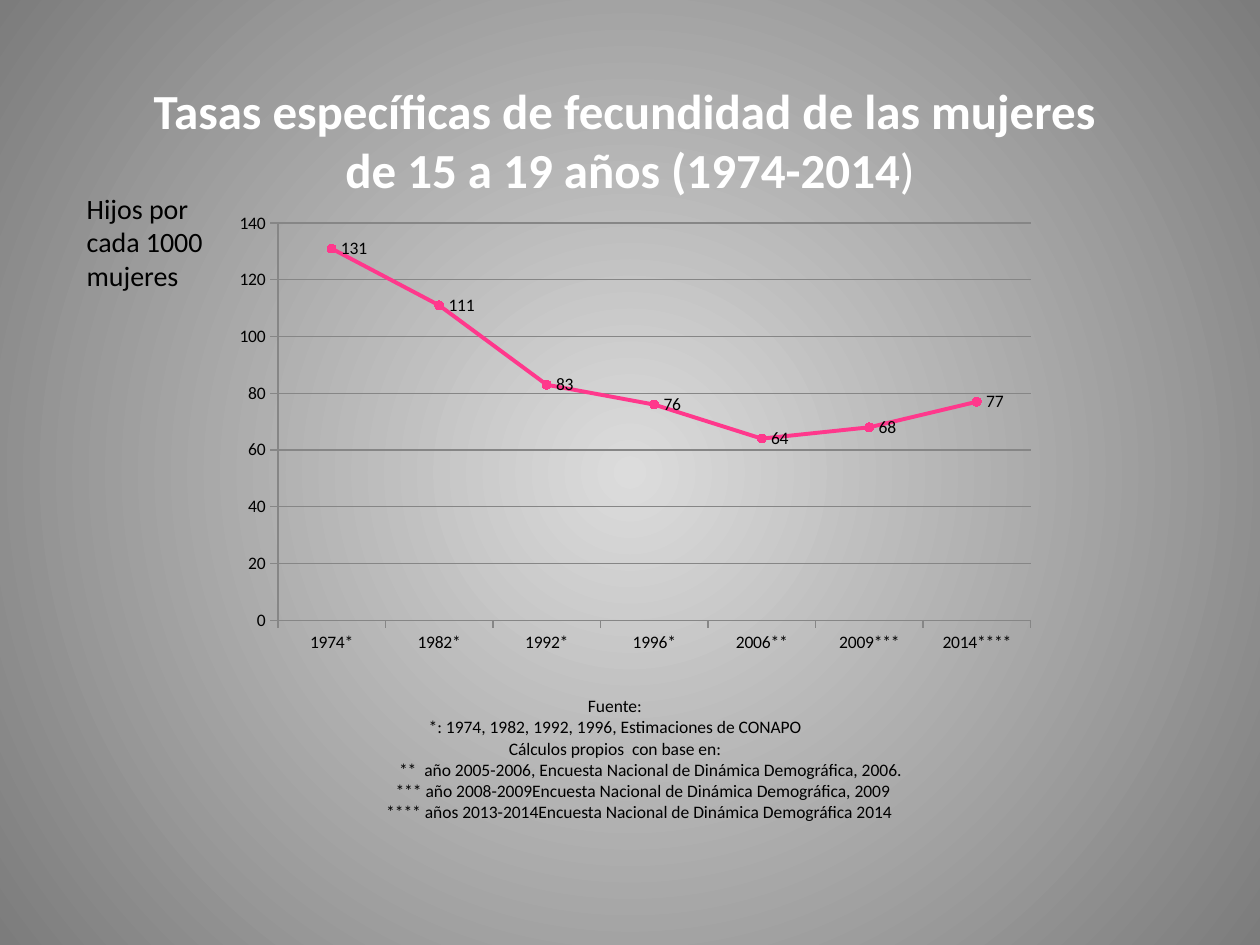
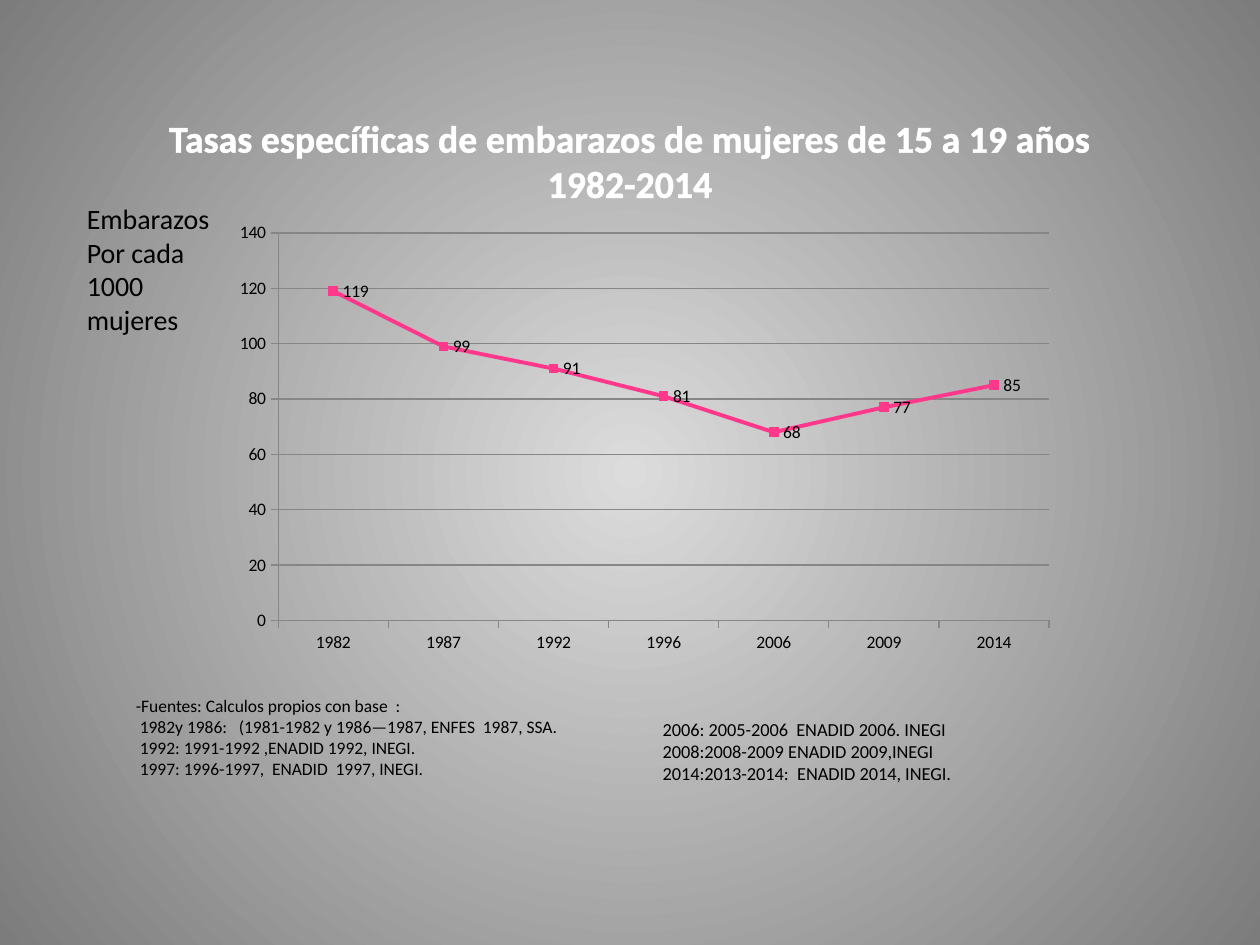
from dataclasses import dataclass

import lxml.etree
import pptx
import pptx.chart.chart
import pptx.chart.data
import pptx.dml.color
import pptx.enum.chart
import pptx.enum.text
import pptx.oxml.ns
import pptx.presentation
import pptx.slide
import pptx.text.text
import pptx.util

EMU_PER_PX = 9144
FONT = "Calibri"
BLACK, WHITE, PINK, GREY = "000000", "FFFFFF", "FF388C", "868686"
CENTRE_LIGHT, EDGE_DARK = "DCDCDC", "7C7C7C"
LEFT, CENTER = pptx.enum.text.PP_ALIGN.LEFT, pptx.enum.text.PP_ALIGN.CENTER
CIRCLE = pptx.enum.chart.XL_MARKER_STYLE.CIRCLE
SQUARE = pptx.enum.chart.XL_MARKER_STYLE.SQUARE


@dataclass(frozen=True)
class Box:
    left: int
    top: int
    width: int
    height: int


@dataclass(frozen=True)
class TextRun:
    text: str
    bold: bool = True


@dataclass(frozen=True)
class Title:
    box: Box
    lines: tuple[tuple[TextRun, ...], ...]
    size: float
    outline: float = 0


@dataclass(frozen=True)
class Line:
    text: str
    indent: int = 0


@dataclass(frozen=True)
class Note:
    box: Box
    lines: tuple[Line, ...]
    size: float = 10
    align: pptx.enum.text.PP_ALIGN = LEFT
    top_inset: int = 5


@dataclass(frozen=True)
class RateChart:
    box: Box
    rates: dict[str, int]
    marker: pptx.enum.chart.XL_MARKER_STYLE


@dataclass(frozen=True)
class RateSlide:
    title: Title
    chart: RateChart
    notes: tuple[Note, ...]


SLIDES = (
    RateSlide(
        Title(
            Box(50, 13, 900, 149),
            (
                (TextRun("Tasas específicas de fecundidad de las mujeres "),),
                (TextRun("de 15 a 19 años (1974-2014"), TextRun(")", bold=False)),
            ),
            size=28,
        ),
        RateChart(
            Box(177, 162, 654, 363),
            {"1974*": 131, "1982*": 111, "1992*": 83, "1996*": 76,
             "2006**": 64, "2009***": 68, "2014****": 77},
            CIRCLE,
        ),
        (
            Note(
                Box(242, 547, 492, 111),
                (
                    Line("Fuente:"),
                    Line("*: 1974, 1982, 1992, 1996, Estimaciones de CONAPO"),
                    Line("Cálculos propios  con base en:"),
                    Line("**  año 2005-2006, Encuesta Nacional de Dinámica Demográfica, 2006.", 56),
                    Line("*** año 2008-2009Encuesta Nacional de Dinámica Demográfica, 2009", 44),
                    Line("**** años 2013-2014Encuesta Nacional de Dinámica Demográfica 2014", 38),
                ),
                align=CENTER,
            ),
            Note(Box(59, 147, 136, 91), (Line("Hijos por cada 1000"), Line("mujeres")), size=16),
        ),
    ),
    RateSlide(
        Title(
            Box(50, 30, 900, 138),
            (
                (TextRun("Tasas específicas de embarazos de mujeres de 15 a 19 años"),),
                (TextRun("1982-2014"),),
            ),
            size=21.6,
            outline=1.45,
        ),
        RateChart(
            Box(177, 170, 669, 355),
            {"1982": 119, "1987": 99, "1992": 91, "1996": 81,
             "2006": 68, "2009": 77, "2014": 85},
            SQUARE,
        ),
        (
            Note(
                Box(98, 547, 409, 77),
                (
                    Line("-Fuentes: Calculos propios con base  :"),
                    Line(" 1982y 1986:   (1981-1982 y 1986—1987, ENFES  1987, SSA."),
                    Line(" 1992: 1991-1992 ,ENADID 1992, INEGI."),
                    Line(" 1997: 1996-1997,  ENADID  1997, INEGI."),
                ),
            ),
            Note(
                Box(516, 547, 362, 98),
                (
                    Line("2006: 2005-2006  ENADID 2006. INEGI"),
                    Line("2008:2008-2009 ENADID 2009,INEGI"),
                    Line("2014:2013-2014:  ENADID 2014, INEGI."),
                ),
                size=10.5,
                top_inset=23,
            ),
            Note(Box(59, 155, 119, 118), (Line("Embarazos"), Line("Por cada 1000 mujeres")), size=16),
        ),
    ),
)


def px(length: int) -> pptx.util.Emu:
    return pptx.util.Emu(length * EMU_PER_PX)


def place(box: Box) -> tuple[pptx.util.Emu, ...]:
    return px(box.left), px(box.top), px(box.width), px(box.height)


def colour(value: str) -> pptx.dml.color.RGBColor:
    return pptx.dml.color.RGBColor.from_string(value)


def add_xml(parent: lxml.etree._Element, tag: str, **attributes: str) -> lxml.etree._Element:
    return lxml.etree.SubElement(parent, pptx.oxml.ns.qn(tag), attributes)


def style_font(font: pptx.text.text.Font, size: float, value: str, bold: bool = False) -> None:
    font.name = FONT
    font.size = pptx.util.Pt(size)
    font.bold = bold
    font.color.rgb = colour(value)


def paint_background(presentation: pptx.presentation.Presentation) -> None:
    master = presentation.slide_master
    fill = master.background.fill
    fill.gradient()
    for stop, position, value in zip(fill.gradient_stops, (0, 1), (CENTRE_LIGHT, EDGE_DARK)):
        stop.position = position
        stop.color.rgb = colour(value)
    gradient = master.element.xpath("p:cSld/p:bg//a:gradFill")[0]
    for linear in gradient.xpath("a:lin"):
        gradient.remove(linear)
    radial = add_xml(gradient, "a:path", path="circle")
    add_xml(radial, "a:fillToRect", l="50000", t="50000", r="50000", b="50000")


def outline_run(run: pptx.text.text._Run, width: float) -> None:
    properties = run._r.get_or_add_rPr()
    line = add_xml(properties, "a:ln", w=str(pptx.util.Pt(width)))
    add_xml(add_xml(line, "a:solidFill"), "a:srgbClr", val=WHITE)
    properties.insert(0, line)


def add_text_frame(slide: pptx.slide.Slide, box: Box) -> pptx.text.text.TextFrame:
    frame = slide.shapes.add_textbox(*place(box)).text_frame
    frame.word_wrap = True
    return frame


def add_title(slide: pptx.slide.Slide, title: Title) -> None:
    frame = add_text_frame(slide, title.box)
    frame.vertical_anchor = pptx.enum.text.MSO_ANCHOR.BOTTOM
    paragraph = frame.paragraphs[0]
    paragraph.alignment = CENTER
    for index, line in enumerate(title.lines):
        if index:
            paragraph.add_line_break()
        for part in line:
            run = paragraph.add_run()
            run.text = part.text
            style_font(run.font, title.size, WHITE, part.bold)
            if title.outline:
                outline_run(run, title.outline)


def add_note(slide: pptx.slide.Slide, note: Note) -> None:
    frame = add_text_frame(slide, note.box)
    frame.auto_size = pptx.enum.text.MSO_AUTO_SIZE.SHAPE_TO_FIT_TEXT
    frame.margin_top = px(note.top_inset)
    for index, line in enumerate(note.lines):
        paragraph = frame.add_paragraph() if index else frame.paragraphs[0]
        paragraph.alignment = note.align
        if line.indent:
            paragraph._p.get_or_add_pPr().set("marL", str(px(line.indent)))
        run = paragraph.add_run()
        run.text = line.text
        style_font(run.font, note.size, BLACK)


def style_axes(chart: pptx.chart.chart.Chart) -> None:
    values = chart.value_axis
    values.minimum_scale, values.maximum_scale, values.major_unit = 0, 140, 20
    values.has_major_gridlines = True
    for axis_line in (values.format.line, chart.category_axis.format.line,
                      values.major_gridlines.format.line):
        axis_line.color.rgb = colour(GREY)
        axis_line.width = pptx.util.Pt(0.75)
    for axis in (values, chart.category_axis):
        axis.major_tick_mark = pptx.enum.chart.XL_TICK_MARK.OUTSIDE


def add_rate_chart(slide: pptx.slide.Slide, rate_chart: RateChart) -> None:
    data = pptx.chart.data.CategoryChartData()
    data.categories = list(rate_chart.rates)
    data.add_series("Series 1", list(rate_chart.rates.values()))
    chart = slide.shapes.add_chart(
        pptx.enum.chart.XL_CHART_TYPE.LINE_MARKERS, *place(rate_chart.box), data
    ).chart
    chart.has_title = False
    chart.has_legend = False
    style_font(chart.font, 10, BLACK)
    style_axes(chart)

    plot = chart.plots[0]
    plot.vary_by_categories = False
    series = plot.series[0]
    series.smooth = False
    series.format.line.color.rgb = colour(PINK)
    series.format.line.width = pptx.util.Pt(2.25)
    series.marker.style = rate_chart.marker
    series.marker.size = 5
    series.marker.format.fill.solid()
    series.marker.format.fill.fore_color.rgb = colour(PINK)
    series.marker.format.line.color.rgb = colour(PINK)
    series.data_labels.show_value = True
    series.data_labels.position = pptx.enum.chart.XL_LABEL_POSITION.RIGHT


def main() -> None:
    presentation = pptx.Presentation()
    presentation.slide_width, presentation.slide_height = px(1000), px(750)
    paint_background(presentation)
    for content in SLIDES:
        slide = presentation.slides.add_slide(presentation.slide_layouts[6])
        add_title(slide, content.title)
        add_rate_chart(slide, content.chart)
        for note in content.notes:
            add_note(slide, note)
    presentation.save("out.pptx")


if __name__ == "__main__":
    main()
